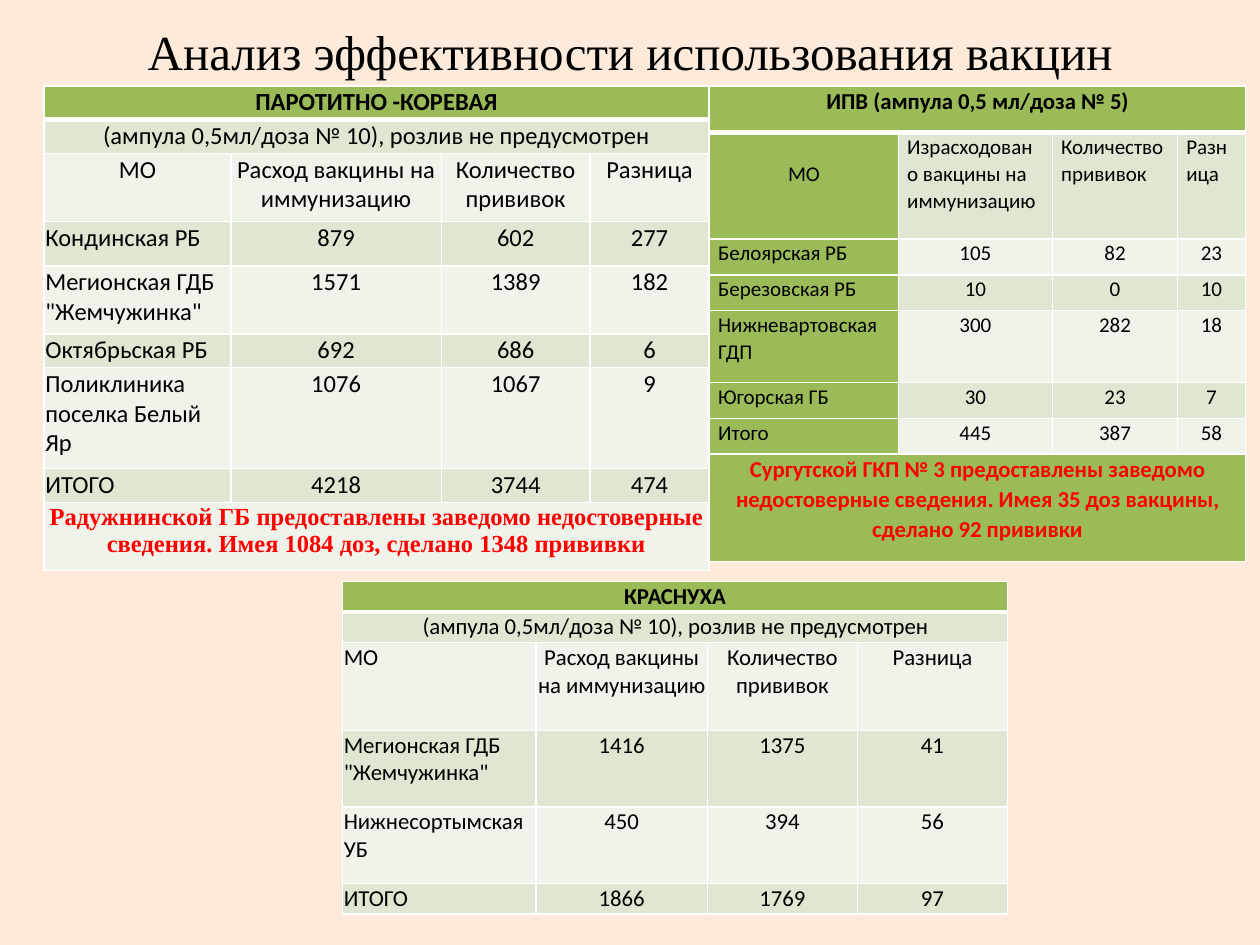
from lxml.etree import SubElement
from pptx import Presentation
from pptx.dml.color import RGBColor
from pptx.enum.text import MSO_ANCHOR, PP_ALIGN
from pptx.oxml import parse_xml
from pptx.oxml.ns import nsdecls
from pptx.util import Pt

HUES = {"page": "FDEADA", "head": "9BBB59", "odd": "DEE7D1", "even": "EFF3EA",
        "line": "FFFFFF", "text": "000000", "alert": "FF0000"}
ALIGN = {"c": PP_ALIGN.CENTER, "l": PP_ALIGN.LEFT}


def style(para, size, font="Calibri", hue="text", bold=False, side="c"):
    para.alignment = ALIGN[side]
    for run in para.runs:
        run.font.size = Pt(size)
        run.font.name = font
        run.font.bold = bold
        run.font.color.rgb = RGBColor.from_string(HUES[hue])


def border(cell, row):
    props = cell._tc.get_or_add_tcPr()
    thick = {"L": 1, "R": 1, "T": 3 if row == 1 else 1, "B": 3 if row == 0 else 1}
    for spot, (edge, width) in enumerate(thick.items()):
        line = parse_xml(f'<a:ln{edge} {nsdecls("a")} w="{Pt(width)}"><a:solidFill>'
                         f'<a:srgbClr val="{HUES["line"]}"/></a:solidFill></a:ln{edge}>')
        props.insert(spot, line)


deck = Presentation()
deck.slide_width, deck.slide_height = Pt(720), Pt(540)
slide = deck.slides.add_slide(deck.slide_layouts[6])
slide.background.fill.solid()
slide.background.fill.fore_color.rgb = RGBColor.from_string(HUES["page"])

title = slide.shapes.add_textbox(Pt(36), Pt(3.6), Pt(648), Pt(51)).text_frame
title.word_wrap = True
title.vertical_anchor = MSO_ANCHOR.MIDDLE
title.text = "Анализ эффективности использования вакцин"
style(title.paragraphs[0], 28, "Times New Roman")

NOTE = "(ампула 0,5мл/доза № 10), розлив не предусмотрен"
HEADS = ["МО", "Расход вакцины на иммунизацию", "Количество прививок", "Разница"]
tight = (0.72, 0.72, 0.72, 0)
loose = (5, 0, 5, 0)

grids = [
    {"at": (25.2, 49), "size": 14, "big": 14, "pad": tight, "space": 1, "sides": "cccc",
     "font": "Times New Roman", "green": False, "names": 2,
     "cols": [106.8, 120.2, 85, 68],
     "rows": [19.4, 19.4, 38.8, 25.4, 38.8, 19.4, 57.6, 19.4, 38.8],
     "cells": [["ПАРОТИТНО -КОРЕВАЯ"], [NOTE], HEADS,
               ["Кондинская РБ", "879", "602", "277"],
               ['Мегионская ГДБ "Жемчужинка"', "1571", "1389", "182"],
               ["Октябрьская РБ", "692", "686", "6"],
               ["Поликлиника поселка Белый Яр", "1076", "1067", "9"],
               ["ИТОГО", "4218", "3744", "474"],
               ["Радужнинской ГБ предоставлены заведомо недостоверные сведения. "
                "Имея 1084 доз, сделано 1348 прививки"]]},
    {"at": (195.8, 332.4), "size": 13, "big": 13, "pad": tight, "space": 1, "sides": "lccc",
     "font": "Calibri", "green": False, "names": 2,
     "cols": [110.4, 98, 85.8, 85.8],
     "rows": [17.4, 17.4, 50.2, 43.8, 43.8, 17.4],
     "cells": [["КРАСНУХА"], [NOTE], HEADS,
               ['Мегионская ГДБ "Жемчужинка"', "1416", "1375", "41"],
               ["Нижнесортымская УБ", "450", "394", "56"],
               ["ИТОГО", "1866", "1769", "97"]]},
    {"at": (405.4, 49), "size": 12, "big": 13, "pad": loose, "space": 1.07, "sides": "clll",
     "font": "Calibri", "green": True, "names": 1,
     "cols": [108, 88, 71.5, 38.7],
     "rows": [26.6, 61, 20.5, 20.5, 41, 20.5, 20.5, 61.2],
     "cells": [["ИПВ (ампула 0,5 мл/доза № 5)"],
               ["МО", "Израсходовано вакцины на иммунизацию", "Количество прививок", "Разница"],
               ["Белоярская РБ", "105", "82", "23"],
               ["Березовская РБ", "10", "0", "10"],
               ["Нижневартовская ГДП", "300", "282", "18"],
               ["Югорская ГБ", "30", "23", "7"],
               ["Итого", "445", "387", "58"],
               ["Сургутской ГКП № 3 предоставлены заведомо недостоверные сведения. "
                "Имея 35 доз вакцины, сделано 92 прививки"]]},
]

for grid in grids:
    cols, rows = grid["cols"], grid["rows"]
    left, top = grid["at"]
    table = slide.shapes.add_table(len(rows), len(cols), Pt(left), Pt(top),
                                   Pt(sum(cols)), Pt(sum(rows))).table
    table.first_row = table.horz_banding = False
    for col, width in zip(table.columns, cols):
        col.width = Pt(width)
    for r, words in enumerate(grid["cells"]):
        table.rows[r].height = Pt(rows[r])
        wide = len(words) == 1
        alert = wide and r > 1
        if wide:
            table.cell(r, 0).merge(table.cell(r, 3))
        for c in range(4):
            cell = table.cell(r, c)
            cell.margin_left, cell.margin_top, cell.margin_right, cell.margin_bottom = map(Pt, grid["pad"])
            green = r == 0 or (grid["green"] and (c == 0 or wide))
            cell.fill.solid()
            cell.fill.fore_color.rgb = RGBColor.from_string(
                HUES["head" if green else "odd" if r % 2 else "even"])
            border(cell, r)
            if c >= len(words):
                continue
            cell.text_frame.text = words[c]
            para = cell.text_frame.paragraphs[0]
            para.line_spacing = grid["space"]
            side = "c" if wide or c else "l"
            if r == grid["names"]:
                side = grid["sides"][c]
            style(para, grid["big"] if wide else grid["size"],
                  grid["font"] if alert else "Calibri",
                  "alert" if alert else "text", r == 0 or alert, side)
            if grid["green"] and (r, c) == (1, 0):
                cell.margin_top = Pt(15.7)

deck.save("out.pptx")
